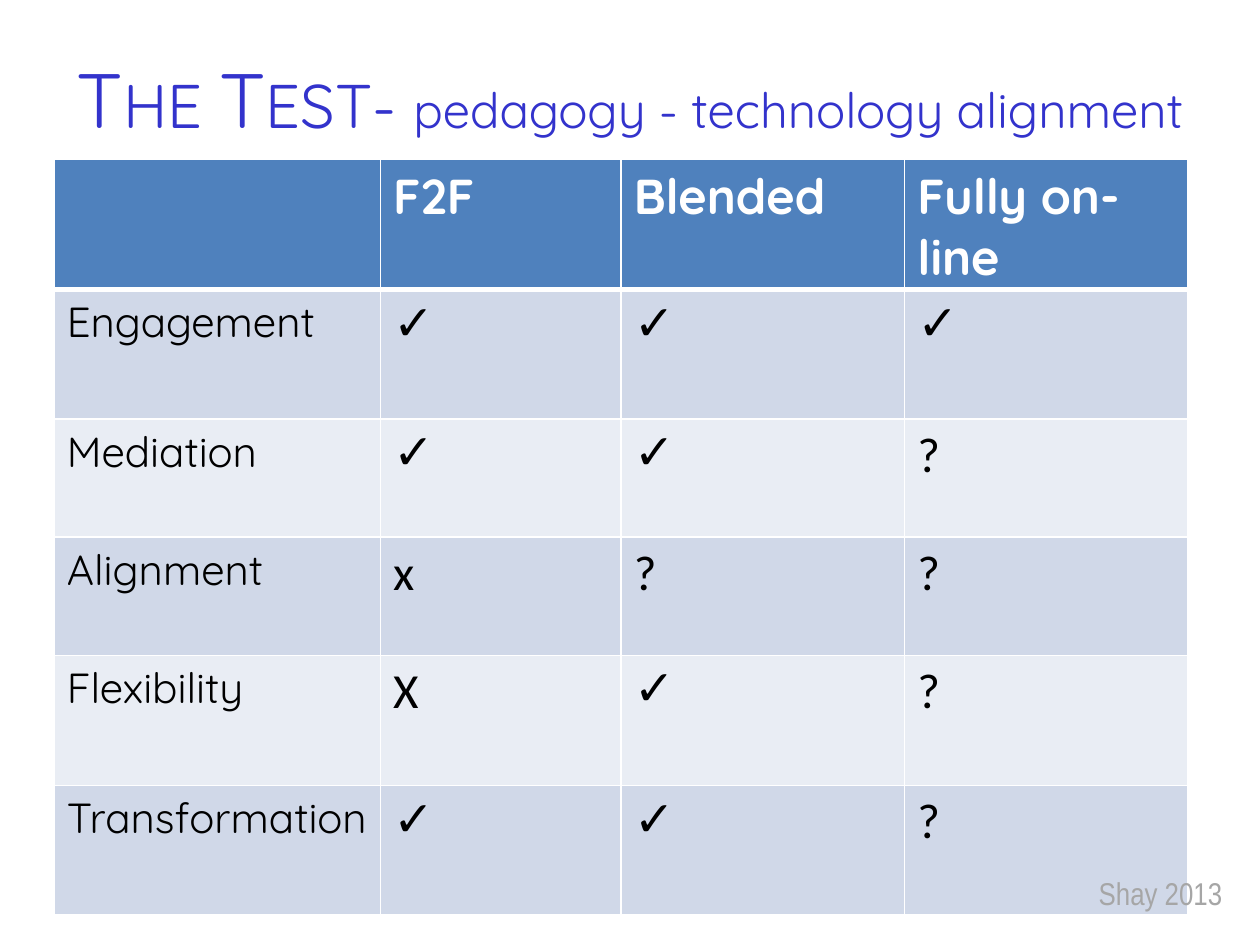
"""Build the slide on how well pedagogy and technology align."""
from lxml import etree
from pptx import Presentation
from pptx.dml.color import RGBColor
from pptx.enum import text
from pptx.oxml import ns
from pptx.util import Pt

HUES = {"head": "4F81BD", "odd": "D0D8E8", "even": "E9EDF4", "white": "FFFFFF",
        "black": "000000", "blue": "3333CC", "grey": "A6A6A6"}
FONTS = {"✓": "Arial", "?": "Calibri", "x": "Calibri", "X": "Calibri"}
ROWS = [
    ["", "F2F", "Blended", "Fully on-line"],
    ["Engagement", "✓", "✓", "✓"],
    ["Mediation", "✓", "✓", "?"],
    ["Alignment", "x", "?", "?"],
    ["Flexibility", "X", "✓", "?"],
    ["Transformation", "✓", "✓", "?"],
]
WIDTHS = [186.5, 137.5, 162, 162]
HEIGHTS = [74.5, 74, 67.5, 67.5, 74.5, 74]


def write(para, words, hue, **form):
    run = para.add_run()
    run.text = words
    for key, val in form.items():
        setattr(run.font, key, val)
    run.font.color.rgb = RGBColor.from_string(HUES[hue])
    return run


def edge(cell, side, width):
    line = etree.SubElement(cell._tc.get_or_add_tcPr(), ns.qn(f"a:ln{side}"), w=str(Pt(width)))
    fill = etree.SubElement(line, ns.qn("a:solidFill"))
    etree.SubElement(fill, ns.qn("a:srgbClr"), val=HUES["white"])


prs = Presentation()
prs.slide_width, prs.slide_height = Pt(720), Pt(540)
slide = prs.slides.add_slide(prs.slide_layouts[5])

title = slide.shapes.title
place = {"left": Pt(0), "top": Pt(26), "width": Pt(720), "height": Pt(60.5)}
for key, val in place.items():
    setattr(title, key, val)
frame = title.text_frame
form = {"word_wrap": True, "vertical_anchor": text.MSO_ANCHOR.TOP,
        "auto_size": text.MSO_AUTO_SIZE.SHAPE_TO_FIT_TEXT}
for key, val in form.items():
    setattr(frame, key, val)
para = frame.paragraphs[0]
para.alignment = text.PP_ALIGN.CENTER
lead = write(para, "The Test- ", "blue", size=Pt(44), name="Quicksand")
lead._r.get_or_add_rPr().set("cap", "small")
write(para, "pedagogy - technology alignment", "blue", size=Pt(28), name="Quicksand")

grid = slide.shapes.add_table(len(ROWS), len(WIDTHS), Pt(31), Pt(91),
                              Pt(sum(WIDTHS)), Pt(sum(HEIGHTS))).table
for col, width in zip(grid.columns, WIDTHS):
    col.width = Pt(width)
for i, (words, height) in enumerate(zip(ROWS, HEIGHTS)):
    grid.rows[i].height = Pt(height)
    band = "head" if i == 0 else "odd" if i % 2 else "even"
    for j, word in enumerate(words):
        cell = grid.cell(i, j)
        for side in "LRTB":
            edge(cell, side, 3 if (i, side) in [(0, "B"), (1, "T")] else 1)
        cell.fill.solid()
        cell.fill.fore_color.rgb = RGBColor.from_string(HUES[band])
        if word:
            write(cell.text_frame.paragraphs[0], word, "black" if i else "white",
                  size=Pt(24 if i and j == 0 else 28), bold=i == 0,
                  name=FONTS.get(word, "Quicksand"))

credit = slide.shapes.add_textbox(Pt(549.5), Pt(496), Pt(156), Pt(29)).text_frame
credit.word_wrap = True
credit.auto_size = text.MSO_AUTO_SIZE.SHAPE_TO_FIT_TEXT
para = credit.paragraphs[0]
para.alignment = text.PP_ALIGN.RIGHT
write(para, "Shay 2013", "grey", size=Pt(18), name="Arial Narrow")

prs.save("out.pptx")
